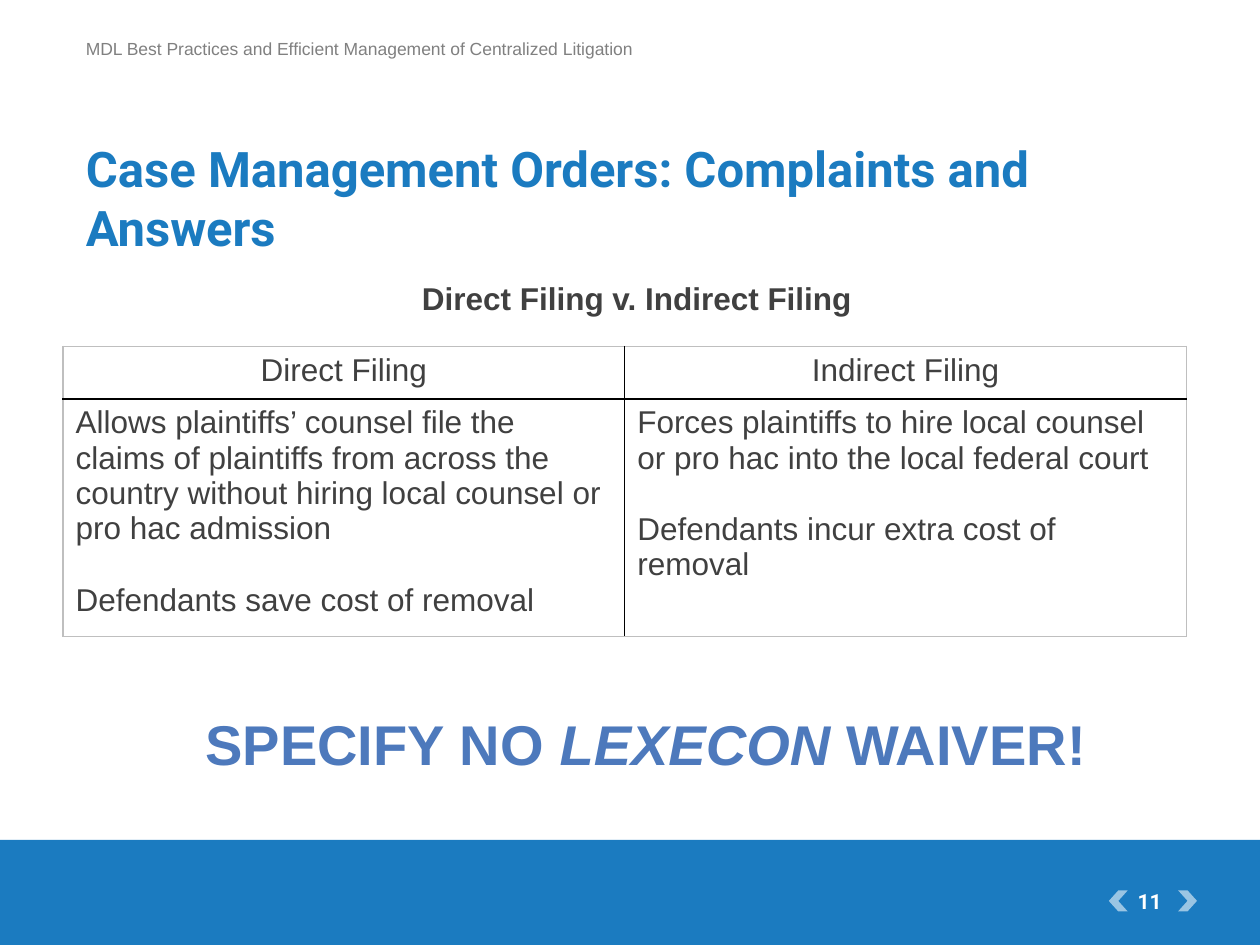
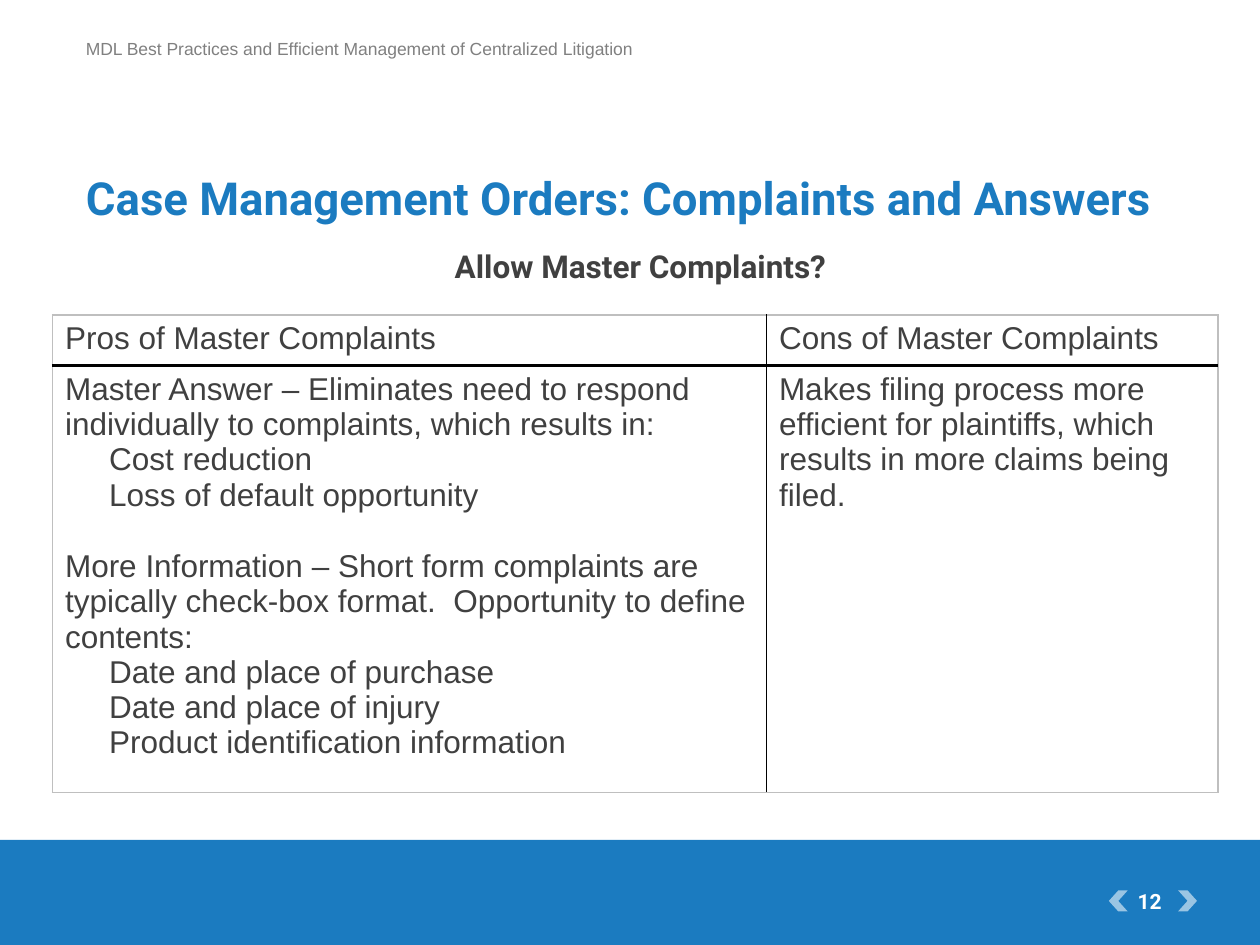
from dataclasses import dataclass

from lxml import etree
from pptx import Presentation
from pptx.dml.color import RGBColor
from pptx.enum.shapes import MSO_SHAPE
from pptx.enum.text import MSO_ANCHOR, PP_ALIGN
from pptx.oxml.ns import qn
from pptx.util import Inches, Pt

RECTANGLE, CHEVRON = MSO_SHAPE.RECTANGLE, MSO_SHAPE.CHEVRON
LEFT, CENTER = PP_ALIGN.LEFT, PP_ALIGN.CENTER
TOP, BOTTOM = MSO_ANCHOR.TOP, MSO_ANCHOR.BOTTOM
GRID_COLUMNS, GRID_ROWS = 120, 90
BLANK_LAYOUT = 6


@dataclass(frozen=True)
class Theme:
    blue: str = "1B7BC0"
    callout_blue: str = "4D79BC"
    white: str = "FFFFFF"
    gray: str = "808080"
    ink: str = "404040"
    frame: str = "BFBFBF"
    rule: str = "000000"
    heading_font: str = "Roboto"
    body_font: str = "Arial"
    running_size: int = 10
    number_size: int = 12
    body_size: int = 18
    long_title_size: int = 26
    title_size: int = 28
    callout_size: int = 32
    frame_width: float = 0.75
    column_rule_width: float = 1
    header_rule_width: float = 1.5
    arrow_opacity: int = 56
    line_gap: float = 20.7
    indent: float = 0.35


@dataclass(frozen=True)
class Entry:
    text: str
    gap: bool = False
    indented: bool = False


THEME = Theme()
RUNNING_HEAD = "MDL Best Practices and Efficient Management of Centralized Litigation"
TITLE = "Case Management Orders: Complaints and Answers"


def grid(units):
    return Inches(units / 12)


def place(*cells):
    return [grid(units) for units in cells]


def text_format(size, color, name=THEME.body_font, bold=False):
    return {"size": Pt(size), "name": name, "bold": bold, "color": color}


RUNNING = text_format(THEME.running_size, THEME.gray)
NUMBER = text_format(THEME.number_size, THEME.white, THEME.heading_font, True)
BODY = text_format(THEME.body_size, THEME.ink)
BODY_BOLD = text_format(THEME.body_size, THEME.ink, bold=True)
QUESTION = text_format(THEME.body_size, THEME.ink, THEME.heading_font, True)
CALLOUT = text_format(THEME.callout_size, THEME.callout_blue, bold=True)


def add_run(paragraph, text, style, italic=False):
    run = paragraph.add_run()
    run.text = text
    for key, value in {**style, "italic": italic}.items():
        if key == "color":
            run.font.color.rgb = RGBColor.from_string(value)
        else:
            setattr(run.font, key, value)


def add_text(slide, area, pieces, style, align=LEFT, anchor=TOP, wrap=True, spacing=None):
    frame = slide.shapes.add_textbox(*place(*area)).text_frame
    frame.word_wrap, frame.vertical_anchor = wrap, anchor
    paragraph = frame.paragraphs[0]
    paragraph.alignment, paragraph.line_spacing = align, spacing
    for text, italic in pieces:
        add_run(paragraph, text, style, italic)


def add_solid(slide, kind, area, color, opacity=100, rotation=0):
    solid = slide.shapes.add_shape(kind, *place(*area))
    solid.shadow.inherit = False
    solid.rotation = rotation
    solid.fill.solid()
    solid.fill.fore_color.rgb = RGBColor.from_string(color)
    solid.line.fill.background()
    if opacity < 100:
        tint = solid.fill._xPr.find(".//" + qn("a:srgbClr"))
        etree.SubElement(tint, qn("a:alpha"), val=str(opacity * 1000))


def add_border(cell, side, color, width):
    line = etree.SubElement(cell._tc.get_or_add_tcPr(), qn("a:ln" + side), w=str(Pt(width)))
    fill = etree.SubElement(line, qn("a:solidFill"))
    etree.SubElement(fill, qn("a:srgbClr"), val=color)


def fill_cell(cell, entries, align):
    for index, entry in enumerate(entries):
        frame = cell.text_frame
        paragraph = frame.add_paragraph() if index else frame.paragraphs[0]
        paragraph.alignment = align
        if entry.gap:
            paragraph.space_before = Pt(THEME.line_gap)
        if entry.indented:
            paragraph._p.get_or_add_pPr().set("marL", str(Inches(THEME.indent)))
        add_run(paragraph, entry.text, BODY)


def add_comparison(slide, corner, widths, heights, headings, arguments, heading_align=LEFT):
    area = place(*corner, sum(widths), sum(heights))
    table = slide.shapes.add_table(2, 2, *area).table
    table.first_row = table.horz_banding = False
    for column, width in zip(table.columns, widths):
        column.width = grid(width)
    for row, height in zip(table.rows, heights):
        row.height = grid(height)
    frame = (THEME.frame, THEME.frame_width)
    column_rule = (THEME.rule, THEME.column_rule_width)
    header_rule = (THEME.rule, THEME.header_rule_width)
    contents = [[[Entry(heading)] for heading in headings], arguments]
    for r, row_contents in enumerate(contents):
        for c, entries in enumerate(row_contents):
            cell = table.cell(r, c)
            borders = {
                "L": column_rule if c else frame,
                "R": frame if c else column_rule,
                "T": header_rule if r else frame,
                "B": frame if r else header_rule,
            }
            for side, border in borders.items():
                add_border(cell, side, *border)
            cell.fill.background()
            fill_cell(cell, entries, LEFT if r else heading_align)


def add_page(deck, number, title_area, title_size):
    slide = deck.slides.add_slide(deck.slide_layouts[BLANK_LAYOUT])
    add_solid(slide, RECTANGLE, (0, 80, GRID_COLUMNS, 10), THEME.blue)
    for left, rotation in ((112.2, 0), (105.6, 180)):
        add_solid(slide, CHEVRON, (left, 84.8, 1.8, 2), THEME.white, THEME.arrow_opacity, rotation)
    add_text(slide, (107, 84, 5, 4), [(str(number), False)], NUMBER, CENTER)
    add_text(slide, (7, 3, 59, 5), [(RUNNING_HEAD, False)], RUNNING)
    title_style = text_format(title_size, THEME.blue, THEME.heading_font, True)
    add_text(slide, title_area, [(TITLE, False)], title_style, anchor=BOTTOM)
    return slide


def add_filing_page(deck):
    slide = add_page(deck, 11, (7, 17, 108, 8), THEME.title_size)
    add_comparison(
        slide, (6, 33), (53.5, 53.5), (5, 21.4),
        ("Direct Filing", "Indirect Filing"),
        (
            [
                Entry("Allows plaintiffs’ counsel file the claims of plaintiffs from across "
                      "the country without hiring local counsel or pro hac admission"),
                Entry("Defendants save cost of removal", gap=True),
            ],
            [
                Entry("Forces plaintiffs to hire local counsel or pro hac into the local "
                      "federal court"),
                Entry("Defendants incur extra cost of removal", gap=True),
            ],
        ),
        CENTER,
    )
    warning = [("SPECIFY NO ", False), ("LEXECON", True), (" WAIVER!", False)]
    add_text(slide, (18, 67, 87, 7.7), warning, CALLOUT, CENTER, wrap=False)
    add_text(slide, (39, 26, 43.8, 4.8), [("Direct Filing v. Indirect Filing", False)],
             BODY_BOLD, wrap=False)


def add_master_complaints_page(deck):
    slide = add_page(deck, 12, (7, 8, 108, 14), THEME.long_title_size)
    add_text(slide, (7, 22, 108, 9), [("Allow Master Complaints?", False)],
             QUESTION, CENTER, spacing=1.25)
    add_comparison(
        slide, (5, 30), (68, 43), (4.6, 39.7),
        ("Pros of Master Complaints", "Cons of Master Complaints"),
        (
            [
                Entry("Master Answer – Eliminates need to respond individually to "
                      "complaints, which results in:"),
                Entry("Cost reduction", indented=True),
                Entry("Loss of default opportunity", indented=True),
                Entry("More Information – Short form complaints are typically check-box "
                      "format.  Opportunity to define contents:", gap=True),
                Entry("Date and place of purchase", indented=True),
                Entry("Date and place of injury", indented=True),
                Entry("Product identification information", indented=True),
            ],
            [
                Entry("Makes filing process more efficient for plaintiffs, which results in "
                      "more claims being filed."),
            ],
        ),
    )


def main():
    deck = Presentation()
    deck.slide_width, deck.slide_height = place(GRID_COLUMNS, GRID_ROWS)
    add_filing_page(deck)
    add_master_complaints_page(deck)
    deck.save("out.pptx")


if __name__ == "__main__":
    main()
